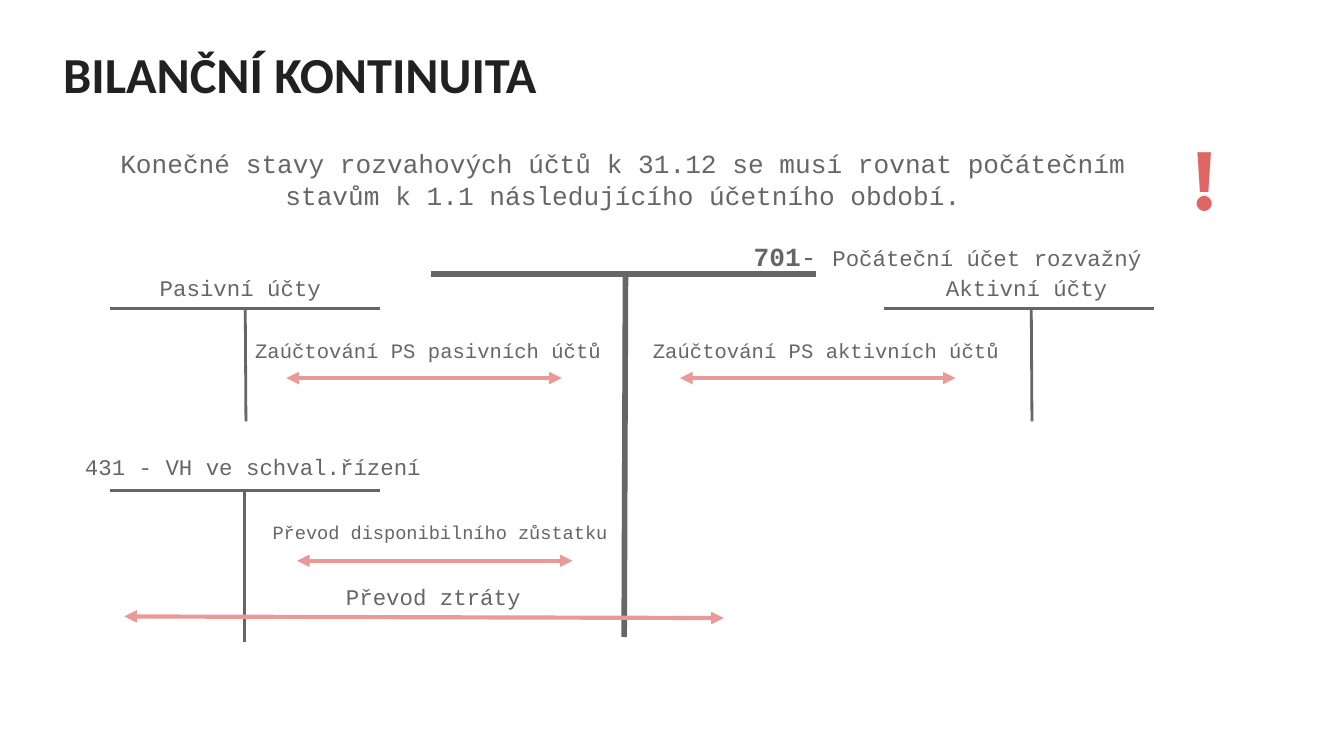
from collections import namedtuple

from lxml.etree import SubElement
from pptx import Presentation
from pptx.dml.color import RGBColor
from pptx.enum.shapes import MSO_CONNECTOR
from pptx.enum.text import MSO_ANCHOR, PP_ALIGN
from pptx.oxml.ns import qn
from pptx.util import Inches, Pt

INK = RGBColor(0x21, 0x21, 0x21)
GREY = RGBColor(0x66, 0x66, 0x66)
RED = RGBColor(0xE0, 0x66, 0x66)
PINK = RGBColor(0xEA, 0x99, 0x99)
MONO = "Courier New"
SLIDE_WIDTH = Inches(10)
SLIDE_HEIGHT = SLIDE_WIDTH * 9 // 16
CELL = SLIDE_WIDTH / 100

Box = namedtuple("Box", "left top width height")


def cells(*counts):
    """Turn counts of grid cells into slide lengths."""
    return [round(count * CELL) for count in counts]


def add_span(para, text, size=12, font=MONO, color=GREY, bold=False):
    """Append formatted text to a paragraph."""
    span = para.add_run()
    span.text = text
    span.font.size = Pt(size)
    span.font.name = font
    span.font.color.rgb = color
    span.font.bold = bold


def prepare_frame(frame):
    """Give a text frame even margins, wrapping and a top anchor."""
    frame.word_wrap = True
    frame.vertical_anchor = MSO_ANCHOR.TOP
    frame.margin_left = frame.margin_right = Inches(0.1)
    frame.margin_top = frame.margin_bottom = Inches(0.1)
    return frame


def add_text(page, box, text, **style):
    """Place a text box with one formatted paragraph and return its frame."""
    frame = prepare_frame(page.shapes.add_textbox(*cells(*box)).text_frame)
    add_span(frame.paragraphs[0], text, **style)
    return frame


def add_line(page, start, end, color=GREY, width=1.5, arrows=False):
    """Draw a straight line, with an arrowhead at both ends on request."""
    line = page.shapes.add_connector(
        MSO_CONNECTOR.STRAIGHT, *cells(*start, *end))
    line.line.color.rgb = color
    line.line.width = Pt(width)
    if arrows:
        outline = line.line._get_or_add_ln()
        for end_tag in ("a:headEnd", "a:tailEnd"):
            SubElement(outline, qn(end_tag), type="triangle")
    SubElement(line._element.spPr, qn("a:effectLst"))


def add_title(page, box, text):
    """Move and format the title placeholder."""
    title = page.shapes.title
    title.left, title.top, title.width, title.height = cells(*box)
    para = prepare_frame(title.text_frame).paragraphs[0]
    para.alignment = PP_ALIGN.LEFT
    add_span(para, text, size=27, font="Calibri", color=INK, bold=True)


def add_rule(page, box):
    """Write the continuity rule and the name of the opening account."""
    frame = add_text(
        page, box,
        "Konečné stavy rozvahových účtů k 31.12 se musí rovnat počátečním "
        "stavům k 1.1 následujícího účetního období.", size=14)
    frame.paragraphs[0].alignment = PP_ALIGN.CENTER
    account = frame.add_paragraph()
    account.space_before = Pt(16)
    account._p.get_or_add_pPr().set("marL", str(Inches(5)))
    for text, size, bold in (("701", 14, True), ("- ", 14, False),
                             ("Počáteční účet rozvažný", 12, False)):
        add_span(account, text, size=size, bold=bold)


def add_account(page, box, stem=0.5, lean=0.0, width=1.5):
    """Draw a T account whose bar spans the top of the box."""
    middle = box.left + box.width * stem
    add_line(page, (box.left, box.top), (box.left + box.width, box.top),
             width=width)
    add_line(page, (middle, box.top), (middle + lean, box.top + box.height),
             width=width)


def add_posting(page, box, text, size, start, length, drop, slope=0.0):
    """Label a posting and draw its two-way arrow from the box corner."""
    left, top = box.left + start, box.top + drop
    add_line(page, (left, top), (left + length, top + slope),
             color=PINK, width=2.25, arrows=True)
    add_text(page, box, text, size=size)


def main():
    """Build the slide and save the deck."""
    deck = Presentation()
    deck.slide_width, deck.slide_height = SLIDE_WIDTH, SLIDE_HEIGHT
    page = deck.slides.add_slide(deck.slide_layouts[5])

    add_title(page, Box(3.7, 2.2, 72.1, 4.9), "BILANČNÍ KONTINUITA")
    add_rule(page, Box(5.1, 10, 82.6, 44))
    add_text(page, Box(87.75, 8.4, 5.3, 7.6), "!", size=45,
             font="League Spartan", color=RED, bold=True)

    add_account(page, Box(32.1, 20.4, 28.6, 27), 0.505, -0.1, 3)
    add_account(page, Box(8.2, 22.96, 20.1, 8.4), lean=0.05)
    add_account(page, Box(65.8, 22.96, 20.1, 8.4), 0.544, 0.05)
    add_account(page, Box(8.2, 36.5, 20.1, 11.3), 0.498)

    for box, name in (
            (Box(10.9, 19.4, 16.5, 2.8), "Pasivní účty"),
            (Box(69.4, 19.4, 16.5, 2.8), "Aktivní účty"),
            (Box(5.34, 32.7, 27.6, 3.4), "431 - VH ve schval.řízení")):
        add_text(page, box, name)

    for left, side, start in ((18, "pasivních", 3.3),
                              (47.6, "aktivních", 3)):
        add_posting(page, Box(left, 24.2, 31.4, 2.8),
                    f"Zaúčtování PS {side} účtů", 11, start, 20.5, 3.93)
    add_posting(page, Box(19.3, 37.9, 30, 3.4),
                "Převod disponibilního zůstatku", 10, 2.8, 20.5, 3.83)
    add_posting(page, Box(24.75, 42.4, 17.9, 2.8), "Převod ztráty",
                12, -15.5, 44.6, 3.47, slope=0.12)

    deck.save("out.pptx")


if __name__ == "__main__":
    main()
